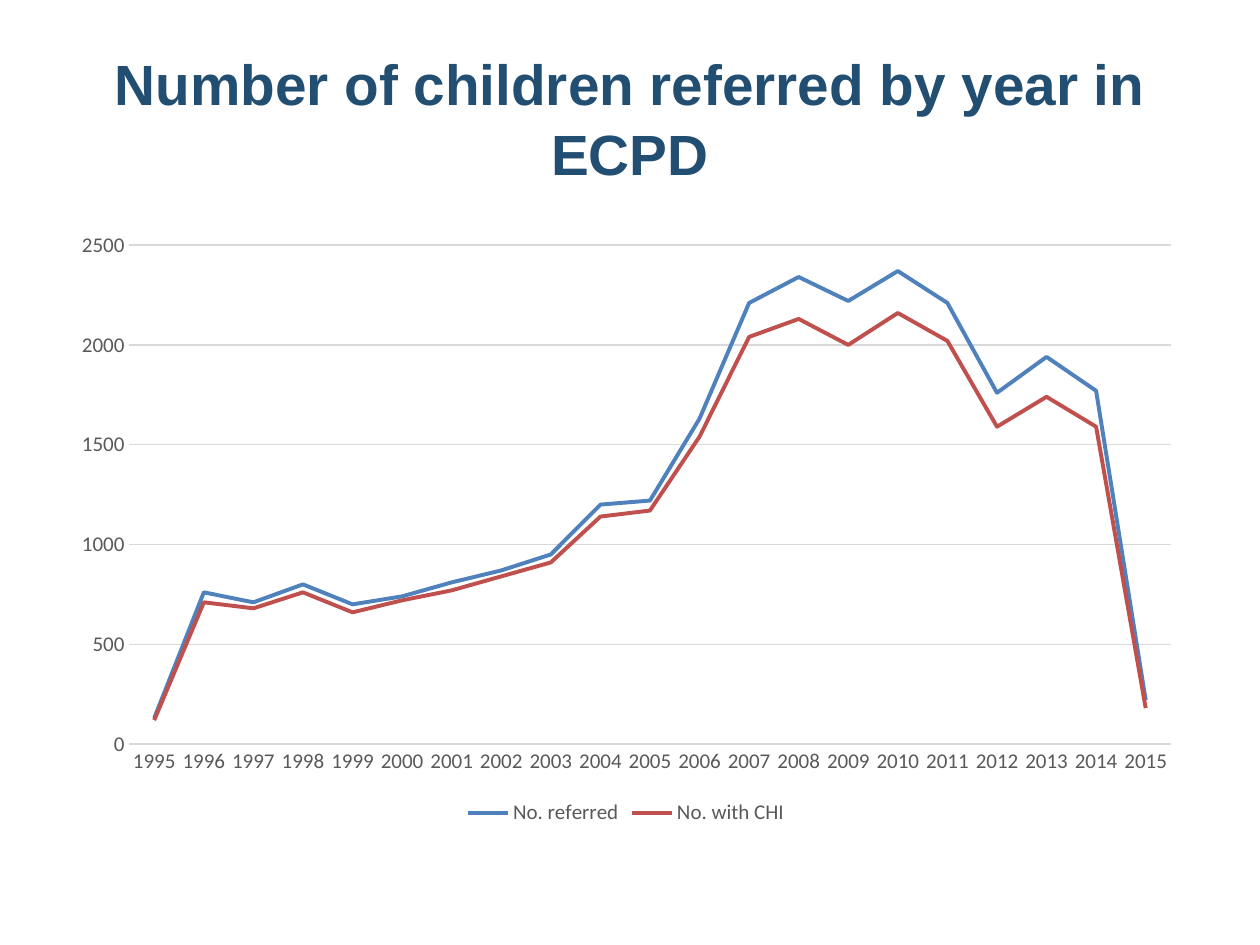
import pptx
import pptx.chart.data
import pptx.dml.color
import pptx.enum.chart
import pptx.enum.text
import pptx.util
from pptx.util import Inches

NAVY = pptx.dml.color.RGBColor(0x22, 0x4E, 0x71)
BLUE = pptx.dml.color.RGBColor(0x4F, 0x81, 0xBD)
RED = pptx.dml.color.RGBColor(0xC0, 0x50, 0x4D)
LABEL_GREY = pptx.dml.color.RGBColor(0x59, 0x59, 0x59)
GRID_GREY = pptx.dml.color.RGBColor(0xD9, 0xD9, 0xD9)

YEARS = [str(year) for year in range(1995, 2016)]
REFERRED = [130, 760, 710, 800, 700, 740, 810, 870, 950, 1200, 1220,
            1630, 2210, 2340, 2220, 2370, 2210, 1760, 1940, 1770, 220]
WITH_CHI = [120, 710, 680, 760, 660, 720, 770, 840, 910, 1140, 1170,
            1540, 2040, 2130, 2000, 2160, 2020, 1590, 1740, 1590, 180]
SERIES = [("No. referred", REFERRED, BLUE), ("No. with CHI", WITH_CHI, RED)]


def set_all(target, values):
    for name, value in values.items():
        setattr(target, name, value)


def format_font(font, color, **values):
    set_all(font, values)
    font.color.rgb = color


def format_line(line, color, width):
    line.color.rgb = color
    line.width = pptx.util.Pt(width)


def place_title(page, left, top, width, height):
    title = page.shapes.title
    set_all(title, dict(left=left, top=top, width=width, height=height))
    title.text_frame.text = "Number of children referred by year in ECPD"
    set_all(title.text_frame, dict(
        word_wrap=True,
        auto_size=pptx.enum.text.MSO_AUTO_SIZE.NONE,
        vertical_anchor=pptx.enum.text.MSO_ANCHOR.MIDDLE))
    para = title.text_frame.paragraphs[0]
    set_all(para, dict(alignment=pptx.enum.text.PP_ALIGN.CENTER,
                       line_spacing=1.04))
    format_font(para.runs[0].font, NAVY, name="Arial",
                size=pptx.util.Pt(32.4), bold=True)


def format_axes(chart):
    label_format = dict(name="Calibri", size=pptx.util.Pt(12), bold=False)
    for axis in (chart.category_axis, chart.value_axis):
        set_all(axis, dict(
            major_tick_mark=pptx.enum.chart.XL_TICK_MARK.NONE,
            minor_tick_mark=pptx.enum.chart.XL_TICK_MARK.NONE))
        format_font(axis.tick_labels.font, LABEL_GREY, **label_format)
    format_line(chart.category_axis.format.line, GRID_GREY, 0.75)
    set_all(chart.value_axis, dict(minimum_scale=0, maximum_scale=2500,
                                   major_unit=500, has_major_gridlines=True))
    chart.value_axis.format.line.fill.background()
    format_line(chart.value_axis.major_gridlines.format.line, GRID_GREY, 0.75)
    set_all(chart.legend, dict(
        position=pptx.enum.chart.XL_LEGEND_POSITION.BOTTOM,
        include_in_layout=False))
    format_font(chart.legend.font, LABEL_GREY, **label_format)


def place_chart(page, left, top, width, height):
    data = pptx.chart.data.CategoryChartData(number_format="General")
    data.categories = YEARS
    for name, values, _ in SERIES:
        data.add_series(name, values)
    chart = page.shapes.add_chart(pptx.enum.chart.XL_CHART_TYPE.LINE,
                                  left, top, width, height, data).chart
    set_all(chart, dict(has_title=False, has_legend=True))
    set_all(chart.font, dict(name="Calibri", size=pptx.util.Pt(10)))
    format_axes(chart)
    chart.plots[0].vary_by_categories = False
    for series, (_, _, color) in zip(chart.plots[0].series, SERIES):
        series.smooth = False
        series.marker.style = pptx.enum.chart.XL_MARKER_STYLE.NONE
        format_line(series.format.line, color, 2.25)


def main():
    deck = pptx.Presentation()
    set_all(deck, dict(slide_width=Inches(10), slide_height=Inches(7.5)))
    page = deck.slides.add_slide(deck.slide_layouts.get_by_name("Title Only"))
    place_title(page, Inches(0.5), Inches(0.3), Inches(9), Inches(1.25))
    place_chart(page, Inches(0.47), Inches(1.75), Inches(9), Inches(4.84))
    deck.save("out.pptx")


if __name__ == "__main__":
    main()
